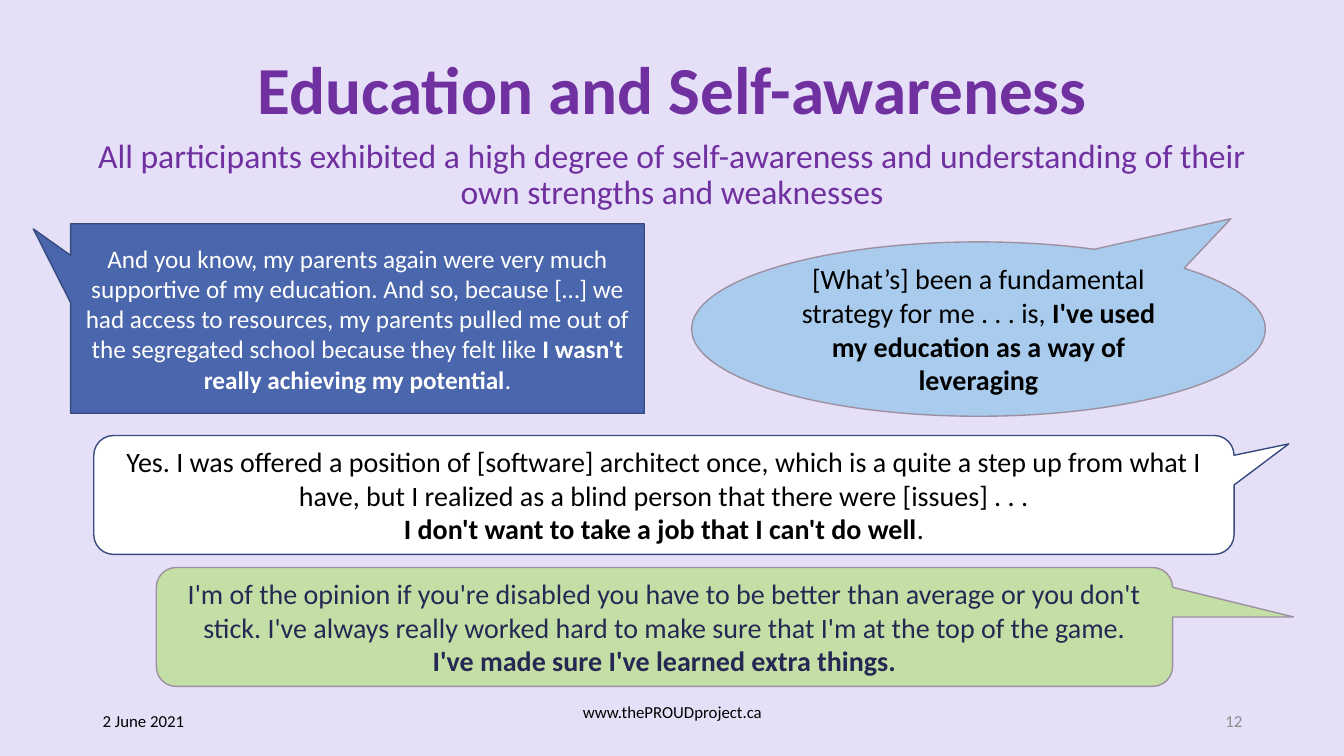
from lxml import etree
from pptx import Presentation
from pptx.dml.color import RGBColor
from pptx.enum.shapes import MSO_SHAPE
from pptx.enum.text import MSO_ANCHOR, MSO_AUTO_SIZE, PP_ALIGN
from pptx.oxml.ns import qn
from pptx.util import Inches, Pt

LEFT, CENTER, RIGHT = PP_ALIGN.LEFT, PP_ALIGN.CENTER, PP_ALIGN.RIGHT
TOP, MIDDLE = MSO_ANCHOR.TOP, MSO_ANCHOR.MIDDLE
NO_AUTOFIT = MSO_AUTO_SIZE.NONE
RECT_CALLOUT = MSO_SHAPE.RECTANGULAR_CALLOUT
OVAL_CALLOUT = MSO_SHAPE.OVAL_CALLOUT
ROUND_CALLOUT = MSO_SHAPE.ROUNDED_RECTANGULAR_CALLOUT

FONT = "Calibri"
LAVENDER, PURPLE = "E5E0F8", "7030A0"
BLUE, NAVY, INK = "4A66AC", "374B7F", "242852"
SKY, GREEN, MAUVE = "A9CCEE", "91DE26", "9D90A0"
WHITE, BLACK, GREY = "FFFFFF", "000000", "8C8C8C"

# Each quote: shape, box, tail adjustments, colours, opacity, text size and
# paragraphs made of (text, bold) spans
QUOTES = [
    dict(kind=RECT_CALLOUT, box=(0.7, 2.22, 5.69, 1.88), tail=(-0.565, -0.473),
         fill=BLUE, line=NAVY, color=WHITE, size=18, paras=[
             [("And you know, my parents again were very much supportive of my "
               "education. And so, because […] we had access to resources, my "
               "parents pulled me out of the segregated school because they felt "
               "like", False),
              (" I wasn't really achieving my potential", True),
              (".", False)]]),
    dict(kind=OVAL_CALLOUT, box=(6.86, 2.4, 5.69, 1.73), tail=(0.44, -0.633),
         fill=SKY, line=MAUVE, color=BLACK, size=20, paras=[
             [("[What’s] been a fundamental strategy for me . . . is, ", False),
              ("I've used my education as a way of leveraging", True)]]),
    dict(kind=ROUND_CALLOUT, box=(0.93, 4.32, 11.31, 1.18),
         tail=(0.548, -0.429, 0.167),
         fill=WHITE, line=NAVY, color=BLACK, size=20, paras=[
             [("Yes. I was offered a position of [software] architect once, which "
               "is a quite a step up from what I have, but I realized as a blind "
               "person that there were [issues] . . .", False)],
             [("I don't want to take a job that I can't do well", True),
              (".", False)]]),
    dict(kind=ROUND_CALLOUT, box=(1.55, 5.63, 10.08, 1.18),
         tail=(0.619, -0.084, 0.167),
         fill=GREEN, opacity=39, line=MAUVE, color=INK, size=20, paras=[
             [("I'm of the opinion if you're disabled you have to be better than "
               "average or you don't stick. I've always really worked hard to make "
               "sure that I'm at the top of the game.", False)],
             [("I've made sure I've learned extra things.", True)]]),
]


def rgb(value):
    return RGBColor.from_string(value)


def set_values(target, values):
    for name, value in values.items():
        setattr(target, name, value)


def place(shape, box):
    names = ("left", "top", "width", "height")
    set_values(shape, dict(zip(names, map(Inches, box))))


def write(frame, paras, size, color, align=CENTER, anchor=MIDDLE, spacing=1.0):
    set_values(frame, {"word_wrap": True, "auto_size": NO_AUTOFIT,
                       "vertical_anchor": anchor})
    for index, spans in enumerate(paras):
        para = frame.add_paragraph() if index else frame.paragraphs[0]
        set_values(para, {"alignment": align, "line_spacing": spacing,
                          "space_before": Pt(0)})
        for text, bold in spans:
            span = para.add_run()
            span.text = text
            set_values(span.font, {"name": FONT, "size": Pt(size), "bold": bold})
            span.font.color.rgb = rgb(color)


def add_heading(page, title_box, lead_box):
    # Title
    title = page.shapes.title
    place(title, title_box)
    write(title.text_frame, [[("Education and Self-awareness", True)]],
          48, PURPLE, spacing=0.9)
    # Lead sentence, without a bullet
    lead = page.placeholders[1]
    place(lead, lead_box)
    properties = lead.text_frame.paragraphs[0]._p.get_or_add_pPr()
    properties.set("marL", "0")
    properties.set("indent", "0")
    etree.SubElement(properties, qn("a:buNone"))
    write(lead.text_frame,
          [[("All participants exhibited a high degree of self-awareness and "
             "understanding of their own strengths and weaknesses", False)]],
          24, PURPLE, anchor=TOP, spacing=0.9)


def add_quote(page, kind, box, tail, fill, line, color, size, paras, opacity=100):
    bubble = page.shapes.add_shape(kind, *map(Inches, box))
    for index, value in enumerate(tail):
        bubble.adjustments[index] = value
    bubble.shadow.inherit = False
    bubble.fill.solid()
    bubble.fill.fore_color.rgb = rgb(fill)
    if opacity < 100:
        tint = bubble._element.spPr.find(qn("a:solidFill"))[0]
        etree.SubElement(tint, qn("a:alpha"), val=str(opacity * 1000))
    bubble.line.color.rgb = rgb(line)
    bubble.line.width = Pt(1)
    write(bubble.text_frame, paras, size, color)


def add_footer(page, top, height):
    entries = [
        ("2 June 2021", 0.92, 3, LEFT, BLACK, MIDDLE),
        ("www.thePROUDproject.ca", 4.42, 4.5, CENTER, BLACK, TOP),
        ("12", 9.42, 3, RIGHT, GREY, MIDDLE),
    ]
    for text, left, width, align, color, anchor in entries:
        note = page.shapes.add_textbox(*map(Inches, (left, top, width, height)))
        write(note.text_frame, [[(text, False)]], 12, color, align, anchor)
        if anchor == TOP:
            note.text_frame.margin_top = Inches(0.01)


def main():
    deck = Presentation()
    deck.slide_width, deck.slide_height = Inches(13.33), Inches(7.5)
    page = deck.slides.add_slide(deck.slide_layouts[1])
    page.background.fill.solid()
    page.background.fill.fore_color.rgb = rgb(LAVENDER)

    add_heading(page, (0.92, 0.33, 11.5, 1.18), (0.7, 1.33, 11.93, 0.89))
    for quote in QUOTES:
        add_quote(page, **quote)
    add_footer(page, 6.95, 0.4)
    deck.save("out.pptx")


if __name__ == "__main__":
    main()
